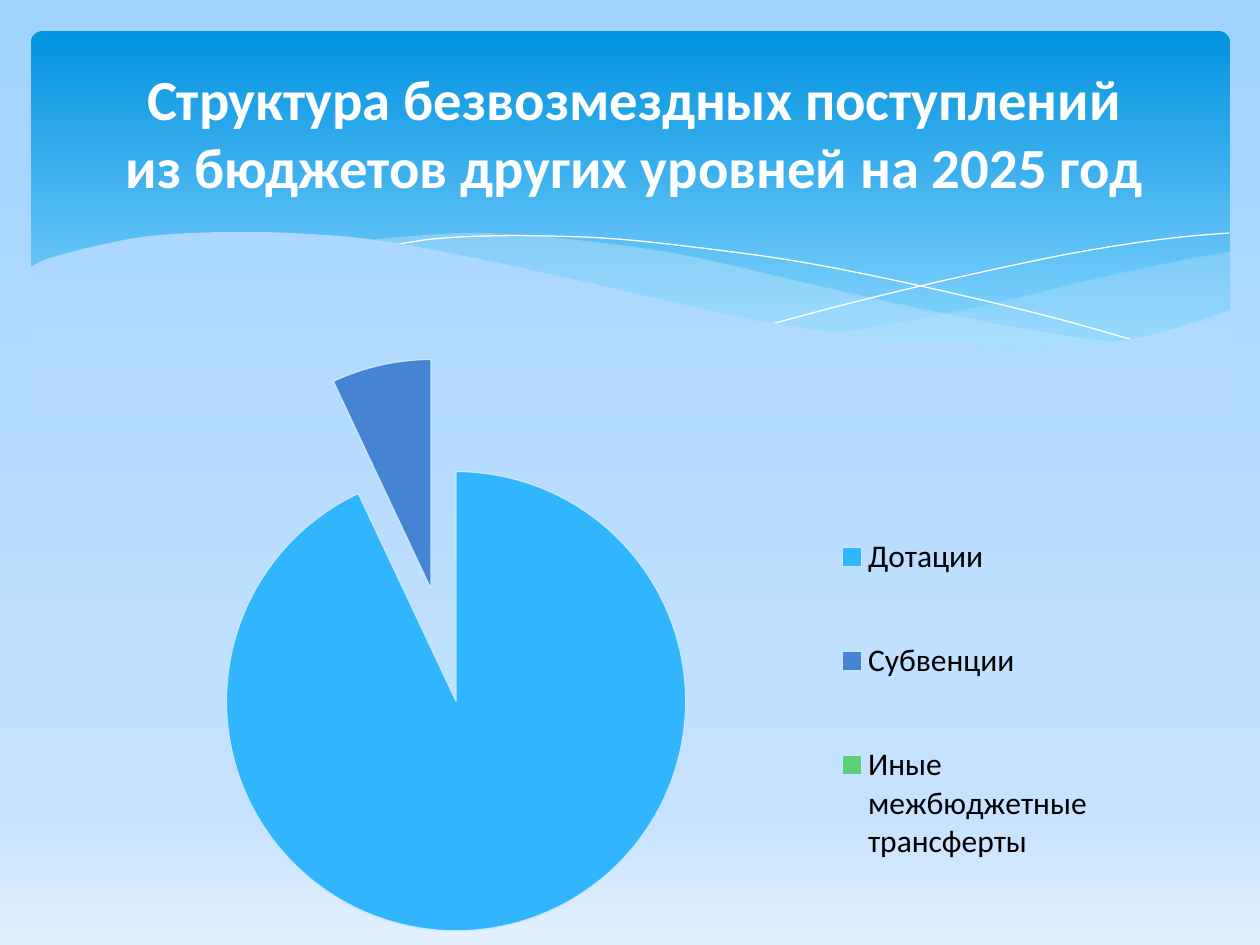
from lxml import etree
from pptx import Presentation
from pptx import util as u
from pptx.chart.data import CategoryChartData
from pptx.dml.color import RGBColor
from pptx.enum import chart as ch, shapes, text
from pptx.oxml import parse_xml
from pptx.oxml.ns import nsdecls, qn

SCALE = 914400 / 126
FONT = "Calibri"
WHITE = RGBColor(0xFF, 0xFF, 0xFF)
BLACK = RGBColor(0x00, 0x00, 0x00)
PALE = RGBColor(0xC6, 0xE7, 0xFC)
SKY_TOP = RGBColor(0xA1, 0xD3, 0xFF)
SKY_LOW = RGBColor(0xC6, 0xE2, 0xFF)
SKY_END = RGBColor(0xE3, 0xF0, 0xFF)
BAND_TOP = RGBColor(0x02, 0x93, 0xE0)
BAND_LOW = RGBColor(0x83, 0xD3, 0xFE)
COVER_TOP = RGBColor(0xAC, 0xD7, 0xFF)  # sky colours at the cover's height
COVER_LOW = RGBColor(0xB4, 0xDB, 0xFF)

TITLE = "Структура безвозмездных поступлений\vиз бюджетов других уровней на 2025 год"
INCOME = [
    ("Дотации", 93, RGBColor(0x31, 0xB6, 0xFD)),
    ("Субвенции", 7, RGBColor(0x45, 0x84, 0xD3)),
    ("Иные межбюджетные трансферты", 0, RGBColor(0x5B, 0xD0, 0x78)),
]

# Each wave: opacity in percent, then its upper and lower edge in px
WAVES = [
    (29,
     [(1230, 252), (1178, 261), (1085, 281), (1014, 299), (919, 319), (833, 334)],
     [(833, 334), (888, 341), (954, 348), (1026, 350), (1099, 347),
      (1160, 337), (1196, 324), (1230, 311)]),
    (40,
     [(1125, 344), (1055, 334), (977, 320), (890, 302), (793, 280), (717, 262),
      (648, 249), (557, 238), (479, 233), (413, 236), (360, 241)],
     [(360, 241), (431, 251), (509, 266), (566, 280), (668, 302), (757, 321),
      (838, 335), (910, 345), (989, 350), (1068, 349), (1125, 344)]),
]
HAIRLINES = [
    [(389, 246), (433, 239), (488, 236), (546, 236), (616, 239), (701, 248),
     (801, 262), (916, 285), (1047, 316), (1143, 343)],
    [(772, 324), (847, 304), (942, 281), (1053, 257), (1128, 244),
     (1182, 237), (1229, 233)],
]
COVER_EDGE = [
    (1231, 310), (1184, 326), (1133, 339), (1071, 347), (1019, 349), (937, 345),
    (842, 334), (730, 315), (563, 277), (460, 255), (368, 239), (290, 233),
    (223, 232), (150, 236), (96, 246), (50, 258), (29, 268),
]
COVER_BASE = [(29, 415), (1231, 415)]


def px(*lengths):
    return [u.Emu(round(length * SCALE)) for length in lengths]


def smooth(knots, steps=5):
    """Points of a Catmull-Rom curve that passes through the knots."""
    padded = [knots[0], *knots, knots[-1]]
    points = [knots[0]]
    for a, b, c, d in zip(padded, padded[1:], padded[2:], padded[3:]):
        for step in range(1, steps + 1):
            t = step / steps
            points.append(tuple(
                (2 * q + (r - p) * t + (2 * p - 5 * q + 4 * r - s) * t ** 2
                 + (3 * q - p - 3 * r + s) * t ** 3) / 2
                for p, q, r, s in zip(a, b, c, d)))
    return points


def set_gradient(fill, element, stops):
    """Top-to-bottom gradient; stops are (percent, colour)."""
    fill.gradient()
    fill.gradient_angle = 270
    stop_list = element.find(".//" + qn("a:gsLst"))
    for old in list(stop_list):
        stop_list.remove(old)
    for percent, color in stops:
        stop_list.append(parse_xml(
            f'<a:gs {nsdecls("a")} pos="{percent * 1000}">'
            f'<a:srgbClr val="{color}"/></a:gs>'))


def add_outline(page, points, close=True):
    builder = page.shapes.build_freeform(
        round(points[0][0] * SCALE), round(points[0][1] * SCALE))
    builder.add_line_segments(
        [(round(x * SCALE), round(y * SCALE)) for x, y in points[1:]], close=close)
    shape = builder.convert_to_shape()
    shape.shadow.inherit = False
    shape.line.fill.background()
    return shape


def add_banner(page):
    band = page.shapes.add_shape(
        shapes.MSO_SHAPE.ROUNDED_RECTANGLE, *px(31, 31, 1199, 340))
    band.adjustments[0] = 0.034
    band.shadow.inherit = False
    band.line.fill.background()
    set_gradient(band.fill, band._element, [(0, BAND_TOP), (90, BAND_LOW)])

    for opacity, upper, lower in WAVES:
        wave = add_outline(page, smooth(upper) + smooth(lower))
        wave.fill.solid()
        wave.fill.fore_color.rgb = PALE
        color = wave._element.spPr.find(qn("a:solidFill")).find(qn("a:srgbClr"))
        etree.SubElement(color, qn("a:alpha"), val=str(opacity * 1000))

    for knots in HAIRLINES:
        hairline = add_outline(page, smooth(knots), close=False)
        hairline.fill.background()
        hairline.line.color.rgb = WHITE
        hairline.line.width = u.Pt(0)

    cover = add_outline(page, smooth(COVER_EDGE) + COVER_BASE)
    set_gradient(cover.fill, cover._element, [(0, COVER_TOP), (100, COVER_LOW)])


def set_layout(parent, position, x, y, w, h, target=""):
    """Fixed place of a chart part, as fractions of the chart."""
    for old in parent.findall(qn("c:layout")):
        parent.remove(old)
    parent.insert(position, parse_xml(
        f'<c:layout {nsdecls("c")}><c:manualLayout>{target}'
        '<c:xMode val="edge"/><c:yMode val="edge"/>'
        f'<c:x val="{x}"/><c:y val="{y}"/><c:w val="{w}"/><c:h val="{h}"/>'
        '</c:manualLayout></c:layout>'))


def add_pie(page):
    data = CategoryChartData()
    data.categories = [name for name, _, _ in INCOME]
    data.add_series("Series 1", [value for _, value, _ in INCOME])
    chart = page.shapes.add_chart(
        ch.XL_CHART_TYPE.PIE, *px(123, 314, 1002, 631), data).chart
    chart.has_title = False
    chart.font.name = FONT
    chart.font.size = u.Pt(18)
    chart.font.color.rgb = BLACK

    plot = chart.plots[0]
    plot.vary_by_categories = True
    series = plot.series[0]
    for index, (_, _, color) in enumerate(INCOME):
        point = series.points[index].format
        point.fill.solid()
        point.fill.fore_color.rgb = color
        point.line.color.rgb = PALE
        point.line.width = u.Pt(0.75)
    first_point = series._element.find(qn("c:dPt"))
    first_point.addprevious(parse_xml(f'<c:explosion {nsdecls("c")} val="25"/>'))
    for point in series._element.findall(qn("c:dPt")):
        point.find(qn("c:spPr")).addprevious(
            parse_xml(f'<c:explosion {nsdecls("c")} val="25"/>'))

    chart.has_legend = True
    chart.legend.position = ch.XL_LEGEND_POSITION.RIGHT
    chart.legend.include_in_layout = False
    set_layout(chart.legend._element, 1, 0.7, 0.25, 0.28, 0.72)
    plot_area = chart._chartSpace.find(".//" + qn("c:plotArea"))
    set_layout(plot_area, 0, 0.02, 0.07, 0.6, 0.91,
               target='<c:layoutTarget val="inner"/>')


def add_text(page, content, place, *, size, color, bold=False, bottom=6):
    box = page.shapes.add_textbox(*px(*place))
    frame = box.text_frame
    frame.word_wrap = True
    frame.vertical_anchor = text.MSO_ANCHOR.MIDDLE
    frame.margin_bottom = px(bottom)[0]
    para = frame.paragraphs[0]
    para.text = content
    para.alignment = text.PP_ALIGN.CENTER
    for span in para.runs:
        span.font.name = FONT
        span.font.size = u.Pt(size)
        span.font.bold = bold
        span.font.color.rgb = color


def main():
    deck = Presentation()
    deck.slide_width, deck.slide_height = px(1260, 945)
    page = deck.slides.add_slide(deck.slide_layouts[6])
    set_gradient(page.background.fill, page._element,
                 [(0, SKY_TOP), (86, SKY_LOW), (100, SKY_END)])
    add_banner(page)
    add_pie(page)
    add_text(page, TITLE, (74, 37, 1121, 258),
             size=32.4, color=WHITE, bold=True, bottom=75)
    deck.save("out.pptx")


if __name__ == "__main__":
    main()
